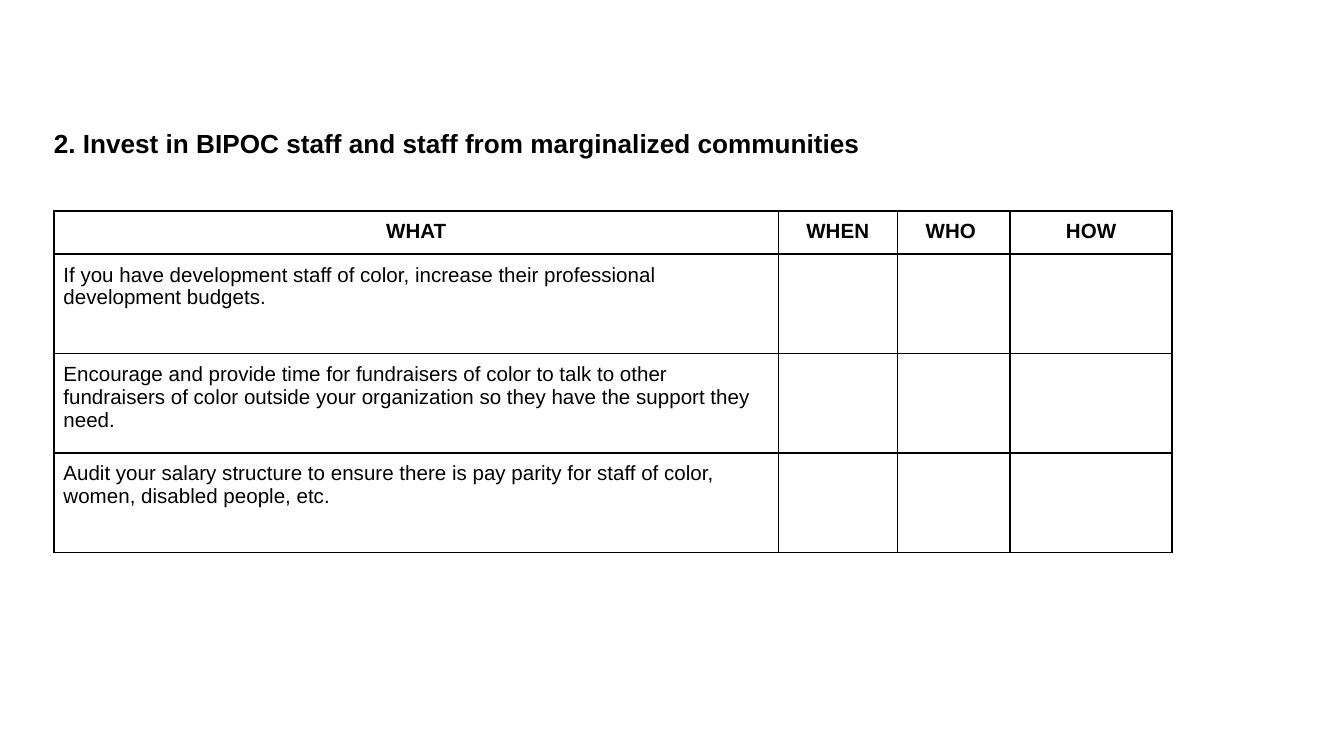
"""Build a planning slide with a title and an action table."""
import pptx
import pptx.dml.color
import pptx.enum.text
import pptx.oxml
import pptx.oxml.ns
import pptx.util

Pt = pptx.util.Pt
Align = pptx.enum.text.PP_ALIGN
Anchor = pptx.enum.text.MSO_ANCHOR
BLACK = pptx.dml.color.RGBColor(0x00, 0x00, 0x00)
WHITE = pptx.dml.color.RGBColor(0xFF, 0xFF, 0xFF)

TITLE = "2. Invest in BIPOC staff and staff from marginalized communities"
HEADINGS = ["WHAT", "WHEN", "WHO ", "HOW"]
ACTIONS = [
    "If you have development staff of color, increase their professional development budgets.",
    "Encourage and provide time for fundraisers of color to talk to other fundraisers of color "
    "outside your organization so they have the support they need.",
    "Audit your salary structure to ensure there is pay parity for staff of color, women, "
    "disabled people, etc.",
]
COLUMN_WIDTHS = [388, 63.75, 60.5, 86.75]
HEADER_HEIGHT = 23
ACTION_HEIGHT = 53.25


class SlideBuilder:
    font_name = "Arial"
    title_size = 14
    table_size = 11
    cell_margin = 5
    border_width = 1

    def __init__(self, deck):
        self.slide = deck.slides.add_slide(deck.slide_layouts[5])

    def fill_text(self, frame, text, size, bold, alignment):
        frame.text = text
        for para in frame.paragraphs:
            para.alignment = alignment
            para.font.size = Pt(size)
            for span in para.runs:
                span.font.name = self.font_name
                span.font.size = Pt(size)
                span.font.bold = bold
                span.font.color.rgb = BLACK

    def title(self, text, left, top, width, height):
        box = self.slide.shapes.title
        box.left, box.top, box.width, box.height = map(Pt, (left, top, width, height))
        frame = box.text_frame
        self.fill_text(frame, text, self.title_size, True, Align.LEFT)
        frame.margin_left = frame.margin_right = Pt(7.2)
        frame.margin_top = frame.margin_bottom = 0
        frame.vertical_anchor = Anchor.MIDDLE
        frame.word_wrap = False
        frame.auto_size = pptx.enum.text.MSO_AUTO_SIZE.SHAPE_TO_FIT_TEXT

    def border(self, cell):
        properties = cell._tc.get_or_add_tcPr()
        for side in ("lnL", "lnR", "lnT", "lnB"):
            properties.append(pptx.oxml.parse_xml(
                f'<a:{side} {pptx.oxml.ns.nsdecls("a")} w="{Pt(self.border_width)}">'
                f'<a:solidFill><a:srgbClr val="{BLACK}"/></a:solidFill></a:{side}>'))

    def table(self, rows, left, top, widths, heights):
        frame = self.slide.shapes.add_table(
            len(rows), len(widths), Pt(left), Pt(top), Pt(sum(widths)), Pt(sum(heights)))
        grid = frame.table
        grid.horz_banding = False
        for column, width in zip(grid.columns, widths):
            column.width = Pt(width)
        for row, height, texts in zip(grid.rows, heights, rows):
            row.height = Pt(height)
            header = texts is rows[0]
            for cell, text in zip(row.cells, texts):
                cell.margin_left = cell.margin_right = Pt(self.cell_margin)
                cell.margin_top = cell.margin_bottom = Pt(self.cell_margin)
                self.border(cell)
                cell.fill.solid()
                cell.fill.fore_color.rgb = WHITE
                self.fill_text(cell.text_frame, text, self.table_size, header,
                               Align.CENTER if header else Align.LEFT)


def main():
    deck = pptx.Presentation()
    deck.slide_width, deck.slide_height = Pt(720), Pt(405)
    page = SlideBuilder(deck)
    page.title(TITLE, 21.6, 68, 448.5, 17)
    rows = [HEADINGS] + [[action, "", "", ""] for action in ACTIONS]
    heights = [HEADER_HEIGHT] + [ACTION_HEIGHT] * len(ACTIONS)
    page.table(rows, 29, 113, COLUMN_WIDTHS, heights)
    deck.save("out.pptx")


if __name__ == "__main__":
    main()
